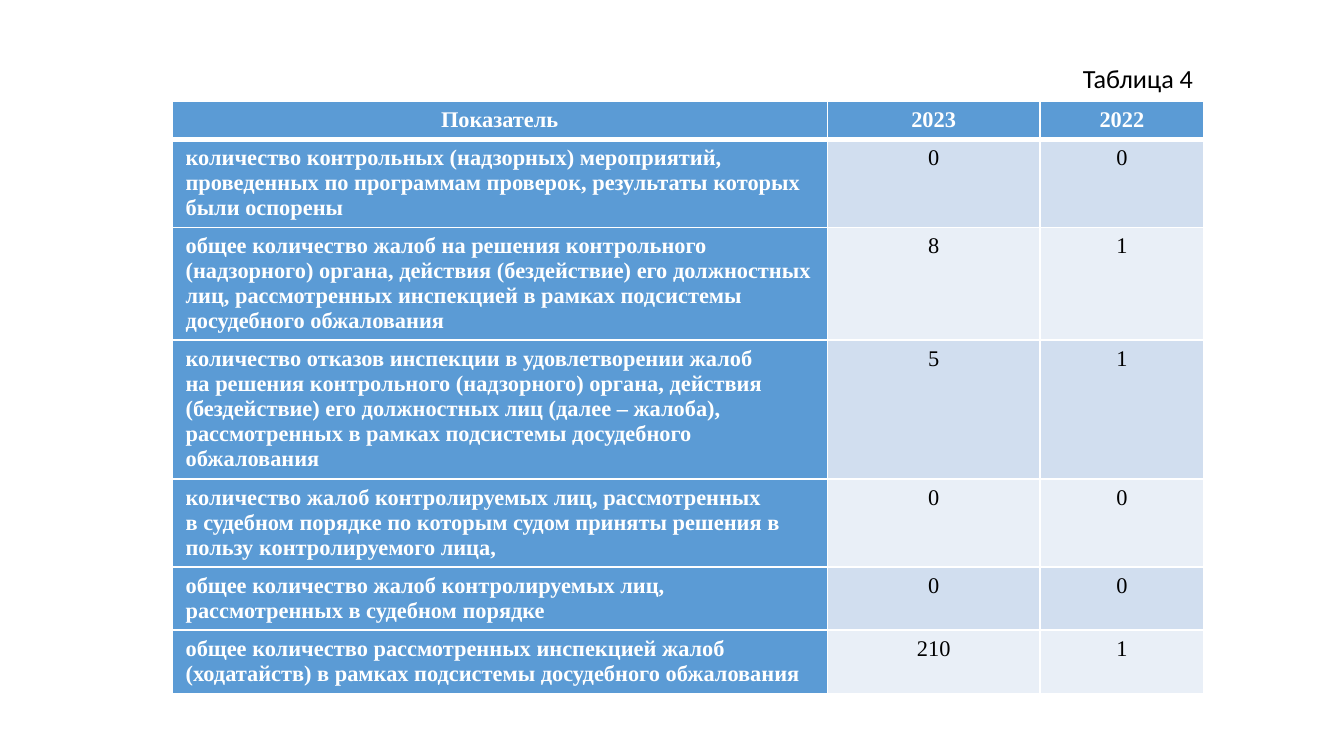
import pptx
import pptx.dml.color
import pptx.enum.text
import pptx.util
from lxml import etree

PX = 9525  # 96 px to the inch
WHITE = pptx.dml.color.RGBColor(0xFF, 0xFF, 0xFF)
BLACK = pptx.dml.color.RGBColor(0x00, 0x00, 0x00)
BLUE = pptx.dml.color.RGBColor(0x5B, 0x9B, 0xD5)
BAND_DARK = pptx.dml.color.RGBColor(0xD1, 0xDE, 0xEF)
BAND_LIGHT = pptx.dml.color.RGBColor(0xE9, 0xEF, 0xF7)
DRAWING = "http://schemas.openxmlformats.org/drawingml/2006/main"
HARD_SPACE = chr(160)  # keeps a preposition with its noun

COLUMN_WIDTHS = [468, 152, 117]
ROW_HEIGHTS = [27, 63, 80, 99, 63, 45, 45]
ROWS = [
    ("Показатель", "2023", "2022"),
    ("количество контрольных (надзорных) мероприятий, проведенных по программам "
     "проверок, результаты которых были оспорены", "0", "0"),
    ("общее количество жалоб на решения контрольного (надзорного) органа, действия "
     "(бездействие) его должностных лиц, рассмотренных инспекцией в рамках "
     "подсистемы досудебного обжалования", "8", "1"),
    (f"количество отказов инспекции в удовлетворении жалоб на{HARD_SPACE}решения "
     "контрольного (надзорного) органа, действия (бездействие) его должностных лиц "
     "(далее – жалоба), рассмотренных в рамках подсистемы досудебного обжалования",
     "5", "1"),
    (f"количество жалоб контролируемых лиц, рассмотренных в{HARD_SPACE}судебном "
     "порядке по которым судом приняты решения в пользу контролируемого лица,",
     "0", "0"),
    ("общее количество жалоб контролируемых лиц, рассмотренных в судебном порядке",
     "0", "0"),
    ("общее количество рассмотренных инспекцией жалоб (ходатайств) в рамках "
     "подсистемы досудебного обжалования", "210", "1"),
]


def add_border(cell, side, points):
    properties = cell._tc.get_or_add_tcPr()
    line = etree.SubElement(properties, f"{{{DRAWING}}}ln{side}",
                            w=str(int(pptx.util.Pt(points))))
    fill = etree.SubElement(line, f"{{{DRAWING}}}solidFill")
    etree.SubElement(fill, f"{{{DRAWING}}}srgbClr", val=str(WHITE))


presentation = pptx.Presentation()
presentation.slide_width = 960 * PX
presentation.slide_height = 540 * PX
slide = presentation.slides.add_slide(presentation.slide_layouts[6])

# Table grid
table_frame = slide.shapes.add_table(
    len(ROWS), len(COLUMN_WIDTHS), 123 * PX, 72 * PX,
    sum(COLUMN_WIDTHS) * PX, sum(ROW_HEIGHTS) * PX)
table = table_frame.table
for column, width in zip(table.columns, COLUMN_WIDTHS):
    column.width = width * PX
for row, height in zip(table.rows, ROW_HEIGHTS):
    row.height = height * PX
table_frame.height = 451 * PX

# Cells: blue header row and first column, banded values
for row_index, texts in enumerate(ROWS):
    for column_index, text in enumerate(texts):
        cell = table.cell(row_index, column_index)
        is_heading = row_index == 0 or column_index == 0
        borders = {"L": 0.96, "R": 0.96,
                   "T": 3 if row_index == 1 else 0.96,
                   "B": 3 if row_index == 0 else 0.96}
        for side, points in borders.items():
            add_border(cell, side, points)
        cell.fill.solid()
        band = BAND_DARK if row_index % 2 else BAND_LIGHT
        cell.fill.fore_color.rgb = BLUE if is_heading else band

        cell.text = text
        paragraph = cell.text_frame.paragraphs[0]
        if row_index == 0 or column_index > 0:
            paragraph.alignment = pptx.enum.text.PP_ALIGN.CENTER
        paragraph.font.name = "Times New Roman"
        paragraph.font.size = pptx.util.Pt(12)
        paragraph.font.bold = is_heading
        paragraph.font.color.rgb = WHITE if is_heading else BLACK

# Table number
caption = slide.shapes.add_textbox(764 * PX, 40 * PX, 123 * PX, 32 * PX)
caption.text_frame.word_wrap = True
caption.text_frame.auto_size = pptx.enum.text.MSO_AUTO_SIZE.SHAPE_TO_FIT_TEXT
caption.text_frame.text = "Таблица 4"
paragraph = caption.text_frame.paragraphs[0]
paragraph.font.name = "Calibri"
paragraph.font.size = pptx.util.Pt(14)
paragraph.font.color.rgb = BLACK

presentation.save("out.pptx")
